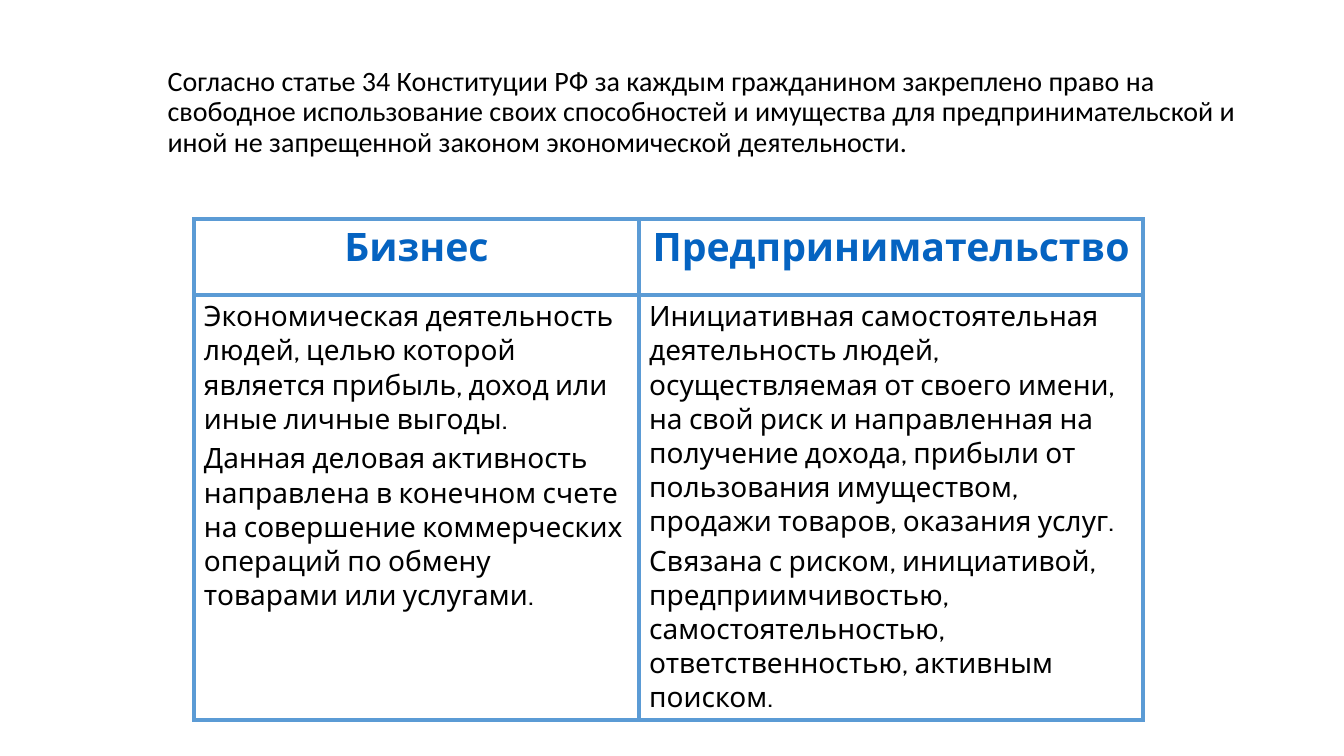
"""Build a slide that compares business and entrepreneurship in a table."""
from lxml.etree import SubElement
from pptx import Presentation
from pptx.dml.color import RGBColor
from pptx.enum.text import MSO_ANCHOR as ANCHOR, MSO_AUTO_SIZE as AUTOSIZE, PP_ALIGN as ALIGN
from pptx.oxml.ns import qn
from pptx.util import Pt


def rgb(color):
    return RGBColor.from_string(color)


def write(tf, text, font="Cabin", size=20, color="000000", bold=False,
          align=ALIGN.LEFT, before=0, spacing=1.0):
    for i, line in enumerate(text.split("\n")):
        p = tf.paragraphs[0] if i == 0 else tf.add_paragraph()
        p.alignment = align
        p.line_spacing = spacing
        p.space_before = Pt(before if i else 0)
        r = p.add_run()
        r.text = line
        r.font.name, r.font.size, r.font.bold = font, Pt(size), bold
        r.font.color.rgb = rgb(color)


prs = Presentation()
prs.slide_width, prs.slide_height = Pt(960), Pt(540)
s = prs.slides.add_slide(prs.slide_layouts[5])

title = s.shapes.title
title.left, title.top, title.width, title.height = Pt(112.5), Pt(24), Pt(792), Pt(113)
tf = title.text_frame
tf.word_wrap = True
tf.auto_size = AUTOSIZE.NONE
tf.vertical_anchor = ANCHOR.MIDDLE
write(tf, "Согласно статье 34 Конституции РФ за каждым гражданином закреплено право на "
      "свободное использование своих способностей и имущества для предпринимательской "
      "и иной не запрещенной законом экономической деятельности.",
      font="Calibri", spacing=0.9)

columns = [
    (318, "Бизнес",
     "Экономическая деятельность людей, целью которой является прибыль, доход или "
     "иные личные выгоды.\n"
     "Данная деловая активность направлена в конечном счете на совершение "
     "коммерческих операций по обмену товарами или услугами."),
    (360, "Предпринимательство",
     "Инициативная самостоятельная деятельность людей, осуществляемая от своего "
     "имени, на свой риск и направленная на получение дохода, прибыли от пользования "
     "имуществом, продажи товаров, оказания услуг.\n"
     "Связана с риском, инициативой, предприимчивостью, самостоятельностью, "
     "ответственностью, активным поиском."),
]
table = s.shapes.add_table(2, 2, Pt(138.5), Pt(156.5), Pt(678), Pt(354)).table
table.first_row = table.horz_banding = False
table.rows[0].height, table.rows[1].height = Pt(54), Pt(300)
for i, (width, heading, body) in enumerate(columns):
    table.columns[i].width = Pt(width)
    write(table.cell(0, i).text_frame, heading, size=28, color="0563C1",
          bold=True, align=ALIGN.CENTER)
    write(table.cell(1, i).text_frame, body, before=4)

for cell in table.iter_cells():
    tcPr = cell._tc.get_or_add_tcPr()
    for side in ("a:lnL", "a:lnR", "a:lnT", "a:lnB"):
        ln = SubElement(tcPr, qn(side), w=str(Pt(3)))
        fill = SubElement(ln, qn("a:solidFill"))
        SubElement(fill, qn("a:srgbClr"), val="5B9BD5")
    cell.fill.solid()
    cell.fill.fore_color.rgb = rgb("FFFFFF")

prs.save("out.pptx")
